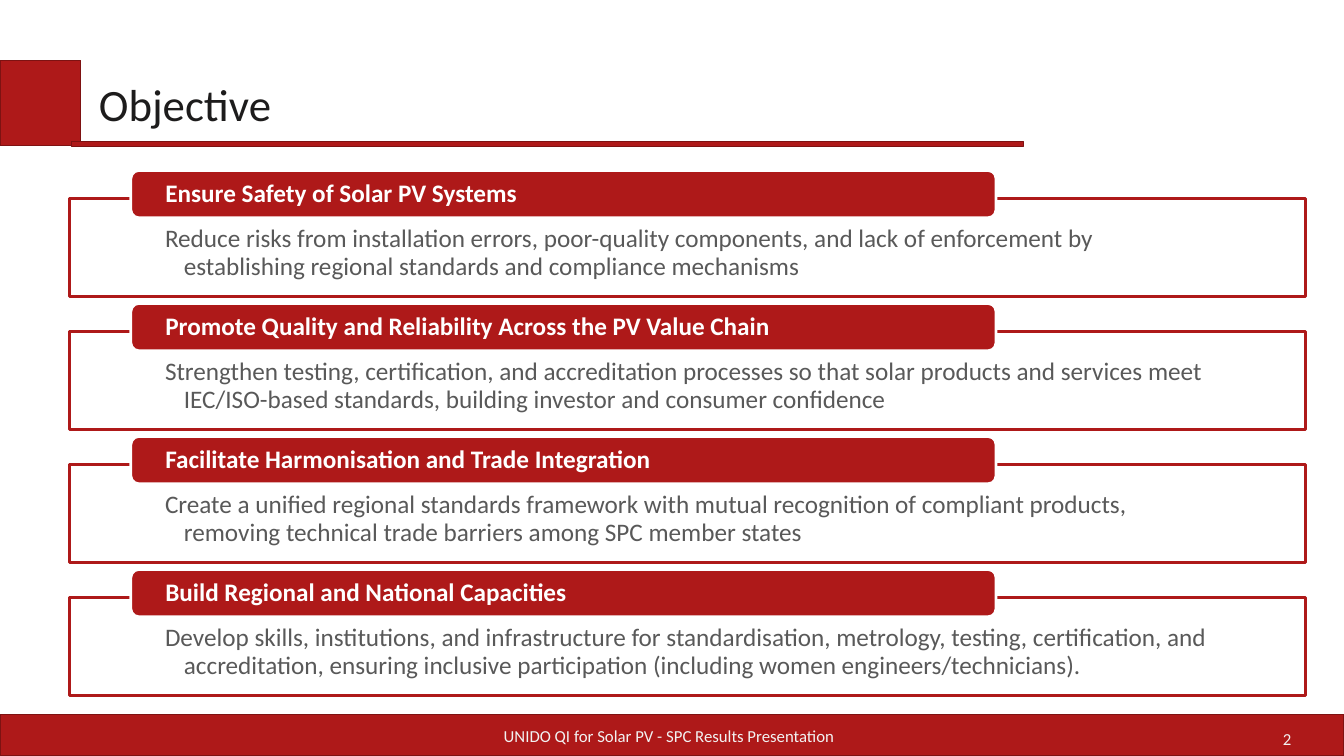
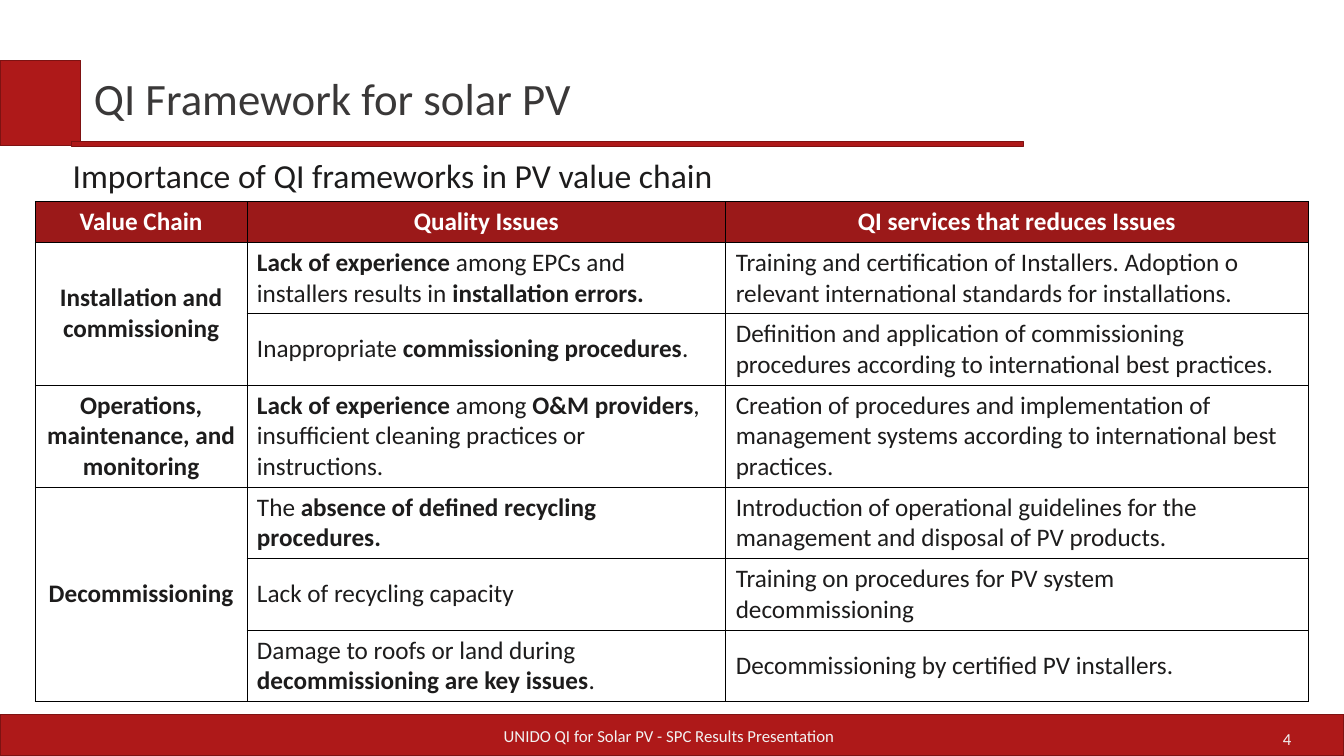
"""Builds two slides on quality infrastructure for solar PV."""
from pptx import Presentation
from pptx.dml.color import RGBColor
from pptx.enum.shapes import MSO_SHAPE
from pptx.enum.text import MSO_ANCHOR, PP_ALIGN
from pptx.oxml.ns import qn
from pptx.util import Pt
from lxml.etree import SubElement

RED = RGBColor(0xAE, 0x19, 0x19)
DARK_RED = RGBColor(0x7E, 0x12, 0x12)
HEADER_RED = RGBColor(0x9B, 0x19, 0x19)
WHITE = RGBColor(0xFF, 0xFF, 0xFF)
PALE = RGBColor(0xF2, 0xF2, 0xF2)
INK = RGBColor(0x1D, 0x1C, 0x1C)
CHARCOAL = RGBColor(0x3A, 0x38, 0x38)
GREY = RGBColor(0x59, 0x59, 0x59)
FONT = "Calibri"
FOOTER = "UNIDO QI for Solar PV - SPC Results Presentation"
BANDS = [(0, 510.5, 960, 29), (0, 43.2, 57.8, 60.8), (51, 101, 680, 3.6)]

OBJECTIVES = [
    ("Ensure Safety of Solar PV Systems",
     "Reduce risks from installation errors, poor-quality components, and lack of enforcement by "
     "establishing regional standards and compliance mechanisms"),
    ("Promote Quality and Reliability Across the PV Value Chain",
     "Strengthen testing, certification, and accreditation processes so that solar products and "
     "services meet IEC/ISO-based standards, building investor and consumer confidence"),
    ("Facilitate Harmonisation and Trade Integration",
     "Create a unified regional standards framework with mutual recognition of compliant products, "
     "removing technical trade barriers among SPC member states"),
    ("Build Regional and National Capacities",
     "Develop skills, institutions, and infrastructure for standardisation, metrology, testing, "
     "certification, and accreditation, ensuring inclusive participation "
     "(including women engineers/technicians)."),
]
CARD_TOP, CARD_PITCH = 142, 95

HEADERS = ["Value Chain", "Quality Issues", "QI services that reduces Issues"]
STAGES = [
    ("Installation and commissioning", [
        ("**Lack of experience** among EPCs and installers results in **installation errors.**",
         "Training and certification of Installers. Adoption o relevant international standards "
         "for installations."),
        ("Inappropriate **commissioning procedures**.",
         "Definition and application of commissioning procedures according to international "
         "best practices."),
    ]),
    ("Operations, maintenance, and monitoring", [
        ("**Lack of experience** among **O&M providers**, insufficient cleaning practices or "
         "instructions.",
         "Creation of procedures and implementation of management systems according to "
         "international best practices."),
    ]),
    ("Decommissioning", [
        ("The **absence of defined recycling procedures.**",
         "Introduction of operational guidelines for the management and disposal of PV products."),
        ("Lack of recycling capacity", "Training on procedures for PV system decommissioning"),
        ("Damage to roofs or land during **decommissioning are key issues**.",
         "Decommissioning by certified PV installers."),
    ]),
]
COL_WIDTHS = [151.2, 342, 416]
ROW_HEIGHTS = [29, 51, 51, 73, 51, 51, 51]


def write(tf, text, size, color, bold=False, align=PP_ALIGN.LEFT, spacing=None):
    p = tf.paragraphs[0]
    p.alignment = align
    p.line_spacing = spacing
    p.font.name, p.font.size, p.font.bold = FONT, Pt(size), bold
    p.font.color.rgb = color
    for i, part in enumerate(text.split("**")):
        if part:
            r = p.add_run()
            r.text = part
            r.font.name, r.font.size = FONT, Pt(size)
            r.font.color.rgb = color
            r.font.bold = bold or i % 2 == 1
    return p


def set_frame(tf, anchor, insets):
    tf.word_wrap = True
    tf.vertical_anchor = anchor
    tf.margin_left, tf.margin_top, tf.margin_right, tf.margin_bottom = map(Pt, insets)


def add_text(s, box, text, size, color, anchor=MSO_ANCHOR.MIDDLE, inset=7.2, **style):
    tf = s.shapes.add_textbox(*map(Pt, box)).text_frame
    set_frame(tf, anchor, [inset] * 4)
    write(tf, text, size, color, **style)


def add_block(s, box, fill, line, width, kind=MSO_SHAPE.RECTANGLE):
    sp = s.shapes.add_shape(kind, *map(Pt, box))
    sp.shadow.inherit = False
    sp.fill.solid()
    sp.fill.fore_color.rgb = fill
    sp.line.color.rgb = line
    sp.line.width = Pt(width)
    return sp


def new_slide(prs, number):
    s = prs.slides.add_slide(prs.slide_layouts[6])
    for box in BANDS:
        add_block(s, box, RED, DARK_RED, 0.85)
    add_text(s, (703.5, 513.5, 226, 29), number, 12, PALE, align=PP_ALIGN.RIGHT)
    add_text(s, (260, 511.2, 436, 29), FOOTER, 12, PALE, align=PP_ALIGN.CENTER)
    return s


def add_card(s, top, heading, body):
    card = add_block(s, (49.5, top, 883, 70), WHITE, RED, 2)
    set_frame(card.text_frame, MSO_ANCHOR.TOP, (68.4, 19.5, 68.4, 10))
    p = write(card.text_frame, body, 18, GREY, spacing=0.9)
    pPr = p._p.get_or_add_pPr()
    pPr.set("marL", str(Pt(13.5)))
    pPr.set("indent", str(Pt(-13.5)))
    label = add_block(s, (93.5, top - 20.2, 618, 33.8), RED, WHITE, 2, MSO_SHAPE.ROUNDED_RECTANGLE)
    set_frame(label.text_frame, MSO_ANCHOR.MIDDLE, (23, 0, 23, 0))
    write(label.text_frame, heading, 18, WHITE, bold=True, spacing=0.9)


def add_borders(cell):
    tcPr = cell._tc.get_or_add_tcPr()
    for side in ("a:lnL", "a:lnR", "a:lnT", "a:lnB"):
        ln = SubElement(tcPr, qn(side), w=str(Pt(0.5)))
        SubElement(SubElement(ln, qn("a:solidFill")), qn("a:srgbClr"), val="000000")


def fill_cell(cell, text, color=INK, **style):
    cell.vertical_anchor = MSO_ANCHOR.MIDDLE
    write(cell.text_frame, text, 18, color, **style)


def add_framework_table(s):
    frame = s.shapes.add_table(len(ROW_HEIGHTS), len(COL_WIDTHS), Pt(25.2), Pt(144),
                               Pt(sum(COL_WIDTHS)), Pt(sum(ROW_HEIGHTS)))
    table = frame.table
    table.first_row = table.horz_banding = False
    for col, width in zip(table.columns, COL_WIDTHS):
        col.width = Pt(width)
    for row, height in zip(table.rows, ROW_HEIGHTS):
        row.height = Pt(height)
    for cell in table.iter_cells():
        add_borders(cell)
        cell.fill.background()
    for c, header in enumerate(HEADERS):
        cell = table.cell(0, c)
        cell.fill.solid()
        cell.fill.fore_color.rgb = HEADER_RED
        fill_cell(cell, header, WHITE, bold=True, align=PP_ALIGN.CENTER)
    top = 1
    for stage, pairs in STAGES:
        if len(pairs) > 1:
            table.cell(top, 0).merge(table.cell(top + len(pairs) - 1, 0))
        fill_cell(table.cell(top, 0), stage, bold=True, align=PP_ALIGN.CENTER)
        for r, pair in enumerate(pairs, top):
            for c, text in enumerate(pair, 1):
                fill_cell(table.cell(r, c), text)
        top += len(pairs)


def main():
    prs = Presentation()
    prs.slide_width, prs.slide_height = Pt(960), Pt(540)

    s = new_slide(prs, "2")
    add_text(s, (61.2, 45.5, 605, 62), "Objective", 32, INK, MSO_ANCHOR.TOP, 9.4)
    for i, (heading, body) in enumerate(OBJECTIVES):
        add_card(s, CARD_TOP + i * CARD_PITCH, heading, body)

    s = new_slide(prs, "4")
    add_framework_table(s)
    add_text(s, (42.5, 101.5, 605, 58), "Importance of QI frameworks in PV value chain",
             24, INK, MSO_ANCHOR.TOP, 9.4)
    add_text(s, (60, 47.5, 603, 50), "QI Framework for solar PV", 32, CHARCOAL, spacing=0.9)

    prs.save("out.pptx")


if __name__ == "__main__":
    main()
